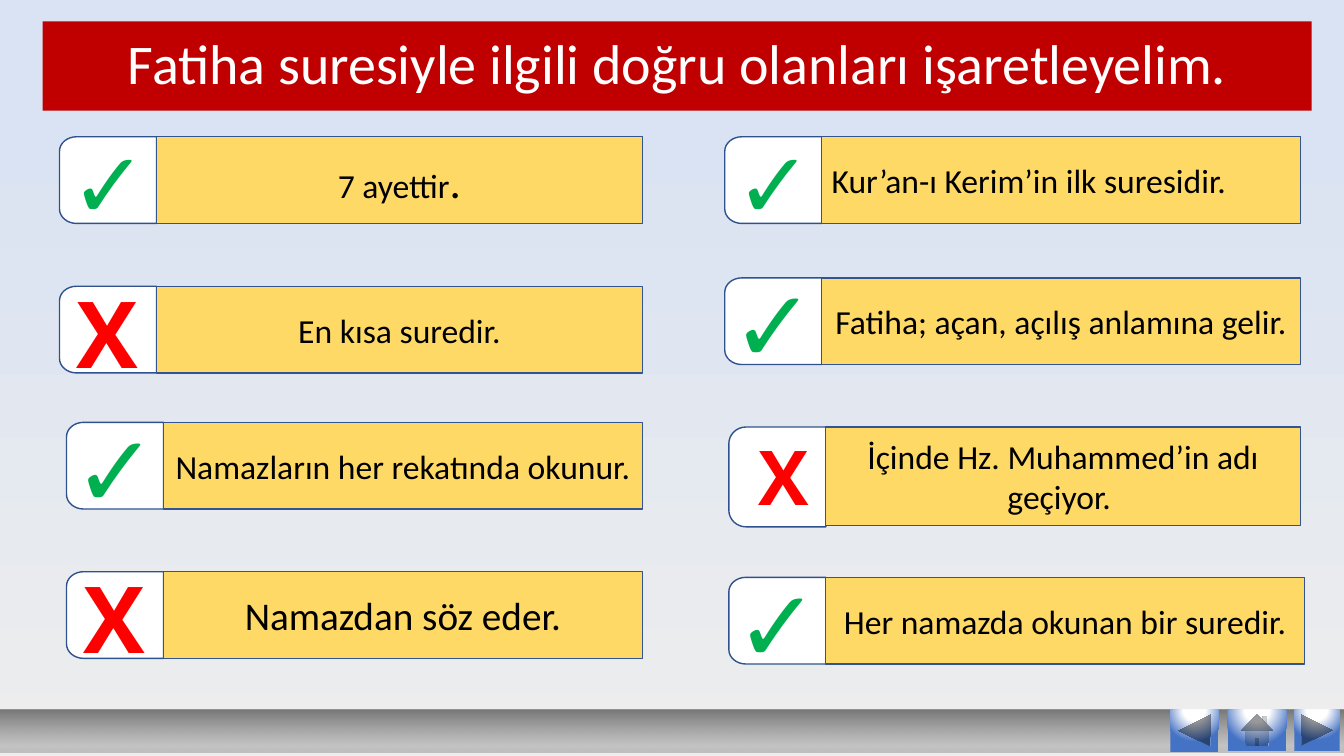
"""Build a true-or-false quiz slide on the Fatiha surah."""
from typing import NamedTuple, Optional

import pptx
import pptx.dml.color
import pptx.enum.shapes
import pptx.enum.text
import pptx.oxml
import pptx.oxml.ns
import pptx.util

Pt = pptx.util.Pt
Kind = pptx.enum.shapes.MSO_SHAPE
Align = pptx.enum.text.PP_ALIGN
Mid = pptx.enum.text.MSO_ANCHOR.MIDDLE
Grow = pptx.enum.text.MSO_AUTO_SIZE.SHAPE_TO_FIT_TEXT
SPACE = pptx.oxml.ns.nsdecls("a")
TAB = 69.3
LINEAR = f'<a:lin {SPACE} ang="16200000" scaled="0"/>'
ROUND = (f'<a:path {SPACE} path="circle"><a:fillToRect l="50000" t="-80000" '
         'r="50000" b="180000"/></a:path>')


class Stop(NamedTuple):
    place: int
    tint: str
    alpha: int = 100


class Mark(NamedTuple):
    sign: str
    left: float
    top: float
    size: int = 66


class Claim(NamedTuple):
    left: float
    top: float
    right: float
    text: str
    mark: Mark
    size: int = 24
    tab: float = 61.9
    bar: float = 61.9
    align: Align = Align.CENTER
    end: str = ""


class Button(NamedTuple):
    kind: Kind
    left: float
    width: float
    height: float


CLAIMS = [
    Claim(42.5, 97.7, 458.8, "7 ayettir", Mark("✓", 26.6, 86.4), end="."),
    Claim(42.5, 204.5, 458.8, "En kısa suredir.", Mark("X", 47.5, 193.7)),
    Claim(47.5, 301.7, 458.8, "Namazların her rekatında okunur.",
          Mark("✓", 31, 286.6, 72)),
    Claim(47.5, 408.4, 458.8, "Namazdan söz eder.",
          Mark("X", 52.9, 397.4), size=28),
    Claim(517.7, 97.7, 928.8, "Kur’an-ı Kerim’in ilk suresidir.",
          Mark("✓", 501.8, 86.4), align=Align.LEFT),
    Claim(520.6, 305, 928.8, "İçinde Hz. Muhammed’in adı geçiyor. ",
          Mark("X", 534.6, 303.8, 54), tab=71.3, bar=70.4),
    Claim(517.7, 198.5, 928.8, "Fatiha; açan, açılış anlamına gelir.",
          Mark("✓", 501.1, 183.6, 72)),
    Claim(520.6, 412.4, 931.7, "Her namazda okunan bir suredir.",
          Mark("✓", 504, 397.4, 72)),
]
BUTTONS = [
    Button(Kind.ACTION_BUTTON_BACK_OR_PREVIOUS, 835.9, 34.6, 30.2),
    Button(Kind.ACTION_BUTTON_FORWARD_OR_NEXT, 924.5, 32.4, 29.5),
    Button(Kind.ACTION_BUTTON_HOME, 877, 41.8, 29.5),
]


def tint(code: str) -> pptx.dml.color.RGBColor:
    return pptx.dml.color.RGBColor.from_string(code)


def grade(fill, node, stops: list[Stop], shade: str) -> None:
    fill.gradient()
    grad = next(node.iter(pptx.oxml.ns.qn("a:gradFill")))
    for child in list(grad):
        grad.remove(child)
    items = "".join(
        f'<a:gs pos="{stop.place * 1000}"><a:srgbClr val="{stop.tint}">'
        f'<a:alpha val="{stop.alpha * 1000}"/></a:srgbClr></a:gs>'
        for stop in stops)
    grad.append(pptx.oxml.parse_xml(f"<a:gsLst {SPACE}>{items}</a:gsLst>"))
    grad.append(pptx.oxml.parse_xml(shade))


def paint(shape, fill: Optional[str] = None, line: Optional[str] = None) -> None:
    shape.shadow.inherit = False
    if fill:
        shape.fill.solid()
        shape.fill.fore_color.rgb = tint(fill)
    if line:
        shape.line.color.rgb = tint(line)
        shape.line.width = Pt(1)
    else:
        shape.line.fill.background()


def block(shapes, kind: Kind, left: float, top: float, width: float,
          height: float, fill: Optional[str] = None,
          line: Optional[str] = None):
    shape = shapes.add_shape(kind, Pt(left), Pt(top), Pt(width), Pt(height))
    paint(shape, fill, line)
    return shape


def style(font, size: int, face: str, code: str, bold: bool = False) -> None:
    font.size, font.name, font.bold = Pt(size), face, bold
    font.color.rgb = tint(code)


def write(shape, text: str, size: int, face: str, code: str,
          align: Align = Align.CENTER, bold: bool = False):
    para = shape.text_frame.paragraphs[0]
    para.text = text
    para.alignment = align
    style(para.runs[0].font, size, face, code, bold)
    return para


def bend(line, spots: list[tuple[float, float]]) -> None:
    points = "".join(f'<a:pt x="{Pt(x)}" y="{Pt(y)}"/>' for x, y in spots)
    curve = pptx.oxml.parse_xml(
        f"<a:cubicBezTo {SPACE}>{points}</a:cubicBezTo>")
    line.getparent().replace(line, curve)


def draw_tab(shapes, left: float, top: float, height: float) -> None:
    wide, tall = 12.2, height / 6
    points = [(wide, 0), (TAB, 0), (TAB, height), (wide, height),
              (0, height - tall), (0, tall), (wide, 0)]
    spots = [(Pt(left + x), Pt(top + y)) for x, y in points]
    form = shapes.build_freeform(*spots[0], scale=1.0)
    form.add_line_segments(spots[1:], close=True)
    shape = form.convert_to_shape()
    paint(shape, "FFFFFF", "2F528F")
    lines = list(shape.element.iter(pptx.oxml.ns.qn("a:lnTo")))
    pull = 0.45
    bend(lines[3], [(wide * pull, height), (0, height - tall * pull), points[4]])
    bend(lines[5], [(0, tall * pull), (wide * pull, 0), points[6]])


def draw_mark(slide, mark: Mark) -> None:
    check = mark.sign == "✓"
    width = 103 if check else mark.size * 0.66 + 14.6
    box = slide.shapes.add_textbox(Pt(mark.left), Pt(mark.top), Pt(width),
                                   Pt(mark.size * 1.2 + 7.5))
    box.text_frame.word_wrap = check
    box.text_frame.auto_size = Grow
    face, code = ("Roboto Slab", "00B050") if check else ("Open Sans", "FF0000")
    write(box, mark.sign, mark.size, face, code, bold=True)


def draw_claim(slide, claim: Claim) -> None:
    group = slide.shapes.add_group_shape()
    draw_tab(group.shapes, claim.left, claim.top, claim.tab)
    start = claim.left + TAB
    bar = block(group.shapes, Kind.RECTANGLE, start, claim.top,
                claim.right - start, claim.bar, "FFD966", "325491")
    bar.text_frame.vertical_anchor = Mid
    para = write(bar, claim.text, claim.size, "Calibri", "000000", claim.align)
    if claim.end:
        run = para.add_run()
        run.text = claim.end
        style(run.font, 32, "Calibri", "000000")
    draw_mark(slide, claim.mark)


def main() -> None:
    deck = pptx.Presentation()
    deck.slide_width, deck.slide_height = Pt(960), Pt(540)
    slide = deck.slides.add_slide(deck.slide_layouts[6])
    grade(slide.background.fill, slide.element,
          [Stop(0, "EDEDED"), Stop(84, "DAE3F3")], LINEAR)
    for claim in CLAIMS:
        draw_claim(slide, claim)
    strip = block(slide.shapes, Kind.RECTANGLE, 0, 506.9, 960, 30.6)
    grade(strip.fill, strip.element,
          [Stop(0, "C0C0C0"), Stop(17, "B3B3B3", 70), Stop(100, "777777")], LINEAR)
    for button in BUTTONS:
        shape = block(slide.shapes, button.kind, button.left, 506.9,
                      button.width, button.height)
        grade(shape.fill, shape.element,
              [Stop(0, "FFFFFF"), Stop(35, "FFFFFF"), Stop(100, "4472C4")], ROUND)
    title = block(slide.shapes, Kind.RECTANGLE, 30.5, 15.3, 906.5, 63.8, "C00000")
    title.text_frame.vertical_anchor = Mid
    para = write(title, "Fatiha suresiyle ilgili doğru olanları işaretleyelim.",
                 40, "Calibri", "FFFFFF")
    para.line_spacing = 0.9
    deck.save("out.pptx")


if __name__ == "__main__":
    main()
